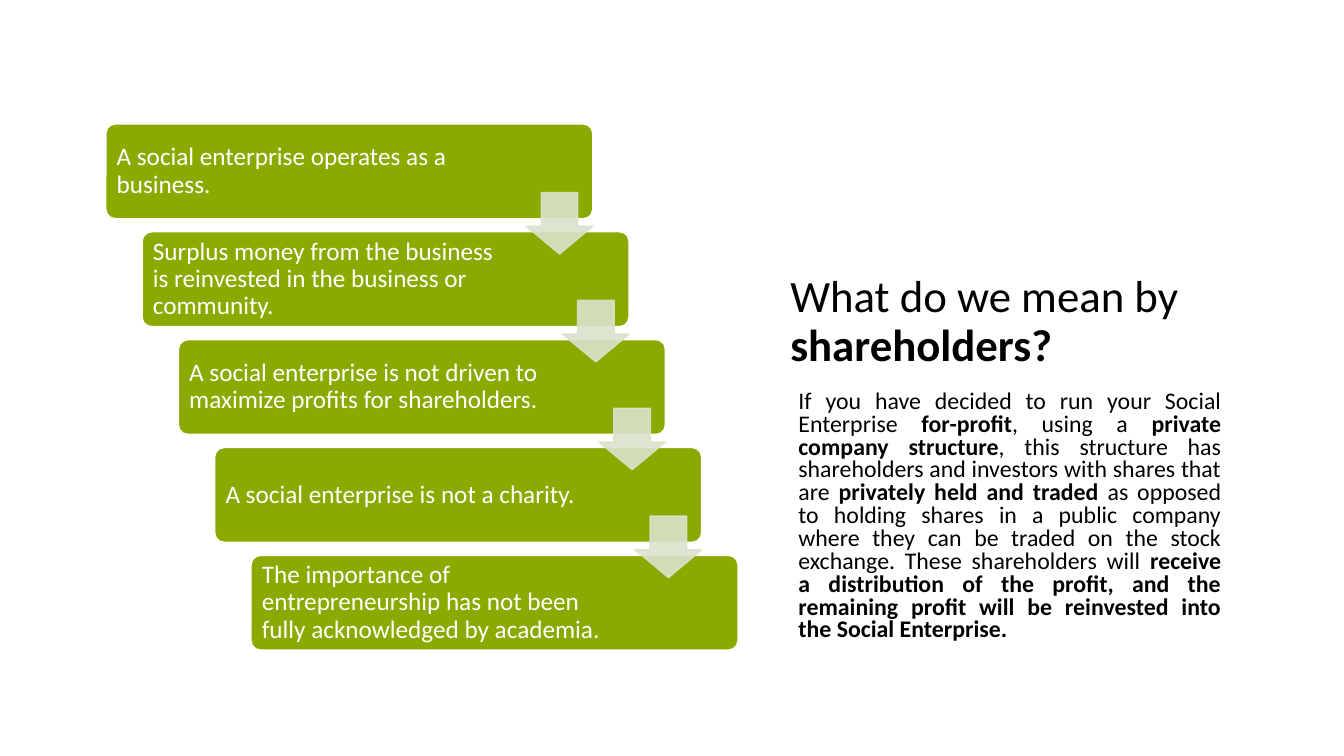
from lxml import etree
from pptx import Presentation
from pptx.dml import color
from pptx.enum import shapes, text
from pptx.oxml import ns
from pptx.util import Inches, Pt

STEPS = [
    "A social enterprise operates as a business.",
    "Surplus money from the business is reinvested in the business or community.",
    "A social enterprise is not driven to maximize profits for shareholders.",
    "A social enterprise is not a charity.",
    "The importance of entrepreneurship has not been fully acknowledged by academia.",
]
TITLE = ["What do we mean by ", "shareholders?"]
BODY = [
    "If you have decided to run your Social Enterprise ",
    "for-profit",
    ", using a ",
    "private company structure",
    ", this structure has shareholders and investors with shares that are ",
    "privately held and traded ",
    "as opposed to holding shares in a public company where they can be traded "
    "on the stock exchange. These shareholders will ",
    "receive a distribution of the profit, and the remaining profit will be "
    "reinvested into the Social Enterprise.",
]
DX, DY = 0.36, 1.07


def paint(fmt, hue, alpha=None):
    """Give a fill a solid colour, with opacity in percent if stated."""
    fmt.solid()
    fmt.fore_color.rgb = color.RGBColor.from_string(hue)
    if alpha:
        for node in fmt._xPr.iter(ns.qn("a:srgbClr")):
            etree.SubElement(node, ns.qn("a:alpha"), val=str(alpha * 1000))


def style(run, size, hue, bold=False):
    """Set the font of a run."""
    run.font.name = "Calibri"
    run.font.size = Pt(size)
    run.font.bold = bold
    paint(run.font.fill, hue)


def add_form(slide, kind, box, fill, line, alpha=None):
    """Add a flat preset shape with a thin outline."""
    form = slide.shapes.add_shape(kind, *map(Inches, box))
    form.shadow.inherit = False
    paint(form.fill, fill, alpha)
    paint(form.line.fill, line)
    form.line.width = Pt(1)
    return form


def add_step(slide, row, words):
    """Add one green step of the staircase."""
    box = (1.05 + row * DX, 1.23 + row * DY, 4.83, 0.94)
    step = add_form(slide, shapes.MSO_SHAPE.ROUNDED_RECTANGLE, box, "8BAA00", "FFFFFF")
    step.adjustments[0] = 0.1
    frame = step.text_frame
    frame.word_wrap = True
    frame.vertical_anchor = text.MSO_ANCHOR.MIDDLE
    frame.margin_left = frame.margin_top = frame.margin_bottom = Inches(0.08)
    frame.margin_right = Inches(1.12 if row else 1.26)
    frame.text = words
    para = frame.paragraphs[0]
    para.alignment = text.PP_ALIGN.LEFT
    para.line_spacing = 0.9
    style(para.runs[0], 18, "FFFFFF")


def add_arrow(slide, row):
    """Add the pale arrow that leads from one step to the next."""
    box = (5.22 + row * DX, 1.91 + row * DY, 0.66, 0.61)
    arrow = add_form(slide, shapes.MSO_SHAPE.DOWN_ARROW, box, "DAE2CB", "DAE2CB", 90)
    paint(arrow.line.fill, "DAE2CB", 90)
    arrow.adjustments[0] = 0.55
    arrow.adjustments[1] = 0.45


def add_text(slide, box, parts, size, space, anchor, align):
    """Add a text box whose parts alternate between regular and bold."""
    frame = slide.shapes.add_textbox(*map(Inches, box)).text_frame
    frame.word_wrap = True
    frame.vertical_anchor = anchor
    para = frame.paragraphs[0]
    para.alignment = align
    para.line_spacing = space
    for spot, part in enumerate(parts):
        run = para.add_run()
        run.text = part
        style(run, size, "000000", spot % 2 == 1)


def main():
    """Build and save the slide."""
    deck = Presentation()
    deck.slide_width, deck.slide_height = Inches(13.33), Inches(7.5)
    slide = deck.slides.add_slide(deck.slide_layouts[6])
    add_text(slide, (7.74, 0.96, 4.54, 2.77), TITLE, 32, 0.9,
             text.MSO_ANCHOR.BOTTOM, text.PP_ALIGN.LEFT)
    add_text(slide, (7.82, 3.83, 4.39, 2.71), BODY, 17, 0.8,
             text.MSO_ANCHOR.TOP, text.PP_ALIGN.JUSTIFY)
    for row, words in enumerate(STEPS):
        add_step(slide, row, words)
    for row in range(len(STEPS) - 1):
        add_arrow(slide, row)
    deck.save("out.pptx")


if __name__ == "__main__":
    main()
